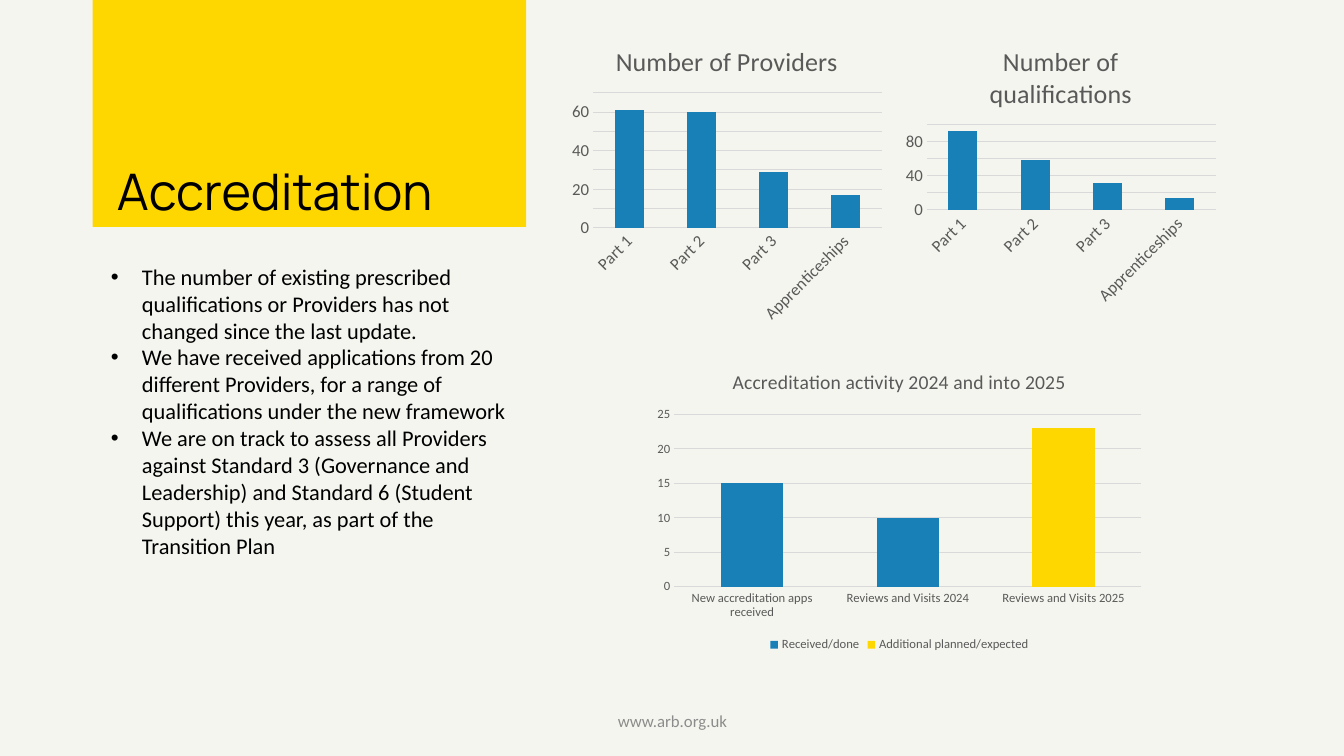
from lxml import etree
from pptx import Presentation
from pptx.chart.data import CategoryChartData
from pptx.dml.color import RGBColor
from pptx.enum.chart import XL_CHART_TYPE, XL_LEGEND_POSITION, XL_TICK_MARK
from pptx.enum.text import MSO_ANCHOR, PP_ALIGN
from pptx.oxml.ns import qn
from pptx.util import Inches, Pt

BACKGROUND = RGBColor(0xF5, 0xF5, 0xEF)
YELLOW = RGBColor(0xFF, 0xD7, 0x00)
BLUE = RGBColor(0x19, 0x80, 0xB7)
BLACK = RGBColor(0x00, 0x00, 0x00)
FOOTER_GREY = RGBColor(0x8C, 0x8C, 0x8C)
CHART_GREY = RGBColor(0x59, 0x59, 0x59)
GRID_GREY = RGBColor(0xD9, 0xD9, 0xD9)

BULLETS = [
    "The number of existing prescribed qualifications or Providers has not "
    "changed since the last update.",
    "We have received applications from 20 different Providers, for a range of "
    "qualifications under the new framework",
    "We are on track to assess all Providers against Standard 3 (Governance and "
    "Leadership) and Standard 6 (Student Support) this year, as part of the "
    "Transition Plan",
]
PARTS = ["Part 1", "Part 2", "Part 3", "Apprenticeships"]
ACTIVITIES = [
    "New accreditation apps received",
    "Reviews and Visits 2024",
    "Reviews and Visits 2025",
]


def style_font(font, size, color, name="Calibri"):
    font.size = Pt(size)
    font.color.rgb = color
    font.name = name
    font.bold = False


def add_run(paragraph, text, size, color, name="Calibri"):
    run = paragraph.add_run()
    run.text = text
    style_font(run.font, size, color, name)


def add_text_frame(slide, left, top, width, height):
    """Add a wrapping text box; return the box and its text frame."""
    box = slide.shapes.add_textbox(
        Inches(left), Inches(top), Inches(width), Inches(height))
    box.text_frame.word_wrap = True
    return box, box.text_frame


def add_title(slide, text):
    box, frame = add_text_frame(slide, 0.92, 0, 4.3, 2.25)
    box.fill.solid()
    box.fill.fore_color.rgb = YELLOW
    frame.vertical_anchor = MSO_ANCHOR.BOTTOM
    frame.margin_left = Inches(0.24)
    paragraph = frame.paragraphs[0]
    paragraph.line_spacing = 0.9
    add_run(paragraph, text, 36, BLACK, "Manrope")


def add_footer(slide, text):
    frame = add_text_frame(slide, 4.42, 6.95, 4.5, 0.4)[1]
    frame.vertical_anchor = MSO_ANCHOR.MIDDLE
    paragraph = frame.paragraphs[0]
    paragraph.alignment = PP_ALIGN.CENTER
    add_run(paragraph, text, 12, FOOTER_GREY)


def add_bullet_list(slide, items):
    frame = add_text_frame(slide, 1, 2.56, 4.22, 3.06)[1]
    indent = Inches(0.31)
    for index, item in enumerate(items):
        paragraph = frame.add_paragraph() if index else frame.paragraphs[0]
        properties = paragraph._p.get_or_add_pPr()
        properties.set("marL", str(indent))
        properties.set("indent", str(-indent))
        etree.SubElement(properties, qn("a:buFont"), typeface="Arial")
        etree.SubElement(properties, qn("a:buChar"), char="•")
        add_run(paragraph, item, 16, BLACK)


def style_axes(chart, label_size, maximum, step):
    category_axis, value_axis = chart.category_axis, chart.value_axis
    for axis in (category_axis, value_axis):
        axis.major_tick_mark = XL_TICK_MARK.NONE
        axis.minor_tick_mark = XL_TICK_MARK.NONE
        style_font(axis.tick_labels.font, label_size, CHART_GREY)
    value_axis.minimum_scale = 0
    value_axis.maximum_scale = maximum
    value_axis.major_unit = step
    value_axis.format.line.fill.background()
    for line in (category_axis.format.line, value_axis.major_gridlines.format.line):
        line.color.rgb = GRID_GREY
        line.width = Pt(0.75)


def slant_category_labels(chart):
    body = chart.category_axis._element.find(qn("c:txPr")).find(qn("a:bodyPr"))
    body.set("rot", str(-45 * 60000))
    body.set("vert", "horz")


def add_column_chart(slide, area, title, title_size, categories, series_list,
                     label_size, maximum, step):
    """Add a stacked column chart; series_list holds (name, values, colour)."""
    data = CategoryChartData()
    data.categories = categories
    for name, values, _ in series_list:
        data.add_series(name, values)
    chart = slide.shapes.add_chart(
        XL_CHART_TYPE.COLUMN_STACKED, *map(Inches, area), data).chart
    style_font(chart.font, 10, BLACK)

    chart.has_title = True
    add_run(chart.chart_title.text_frame.paragraphs[0], title, title_size, CHART_GREY)
    chart.chart_title.include_in_layout = False
    style_axes(chart, label_size, maximum, step)

    plot = chart.plots[0]
    plot.gap_width = 150
    plot.overlap = 100
    plot.vary_by_categories = False
    for series, (_, _, color) in zip(plot.series, series_list):
        series.format.fill.solid()
        series.format.fill.fore_color.rgb = color

    chart.has_legend = len(series_list) > 1
    if chart.has_legend:
        chart.legend.position = XL_LEGEND_POSITION.BOTTOM
        chart.legend.include_in_layout = False
        style_font(chart.legend.font, 9, CHART_GREY)
    return chart


def add_parts_chart(slide, area, title, values, maximum, step):
    chart = add_column_chart(slide, area, title, 18.6, PARTS,
                             [(title, values, BLUE)], 12, maximum, step)
    slant_category_labels(chart)


def main():
    presentation = Presentation()
    presentation.slide_width = Inches(13.33)
    presentation.slide_height = Inches(7.5)
    slide = presentation.slides.add_slide(presentation.slide_layouts[6])
    slide.background.fill.solid()
    slide.background.fill.fore_color.rgb = BACKGROUND

    add_title(slide, "Accreditation")
    add_footer(slide, "www.arb.org.uk")
    add_bullet_list(slide, BULLETS)
    add_parts_chart(slide, (5.61, 0.27, 3.2, 3), "Number of Providers",
                    (61, 60, 29, 17), 70, 10)
    add_parts_chart(slide, (8.92, 0.27, 3.2, 2.82), "Number of qualifications",
                    (93, 58, 32, 14), 100, 20)
    add_column_chart(
        slide, (6.42, 3.51, 5, 3), "Accreditation activity 2024 and into 2025", 14,
        ACTIVITIES,
        [("Received/done", (15, 10, None), BLUE),
         ("Additional planned/expected", (0, 0, 23), YELLOW)],
        9, 25, 5)
    presentation.save("out.pptx")


if __name__ == "__main__":
    main()
